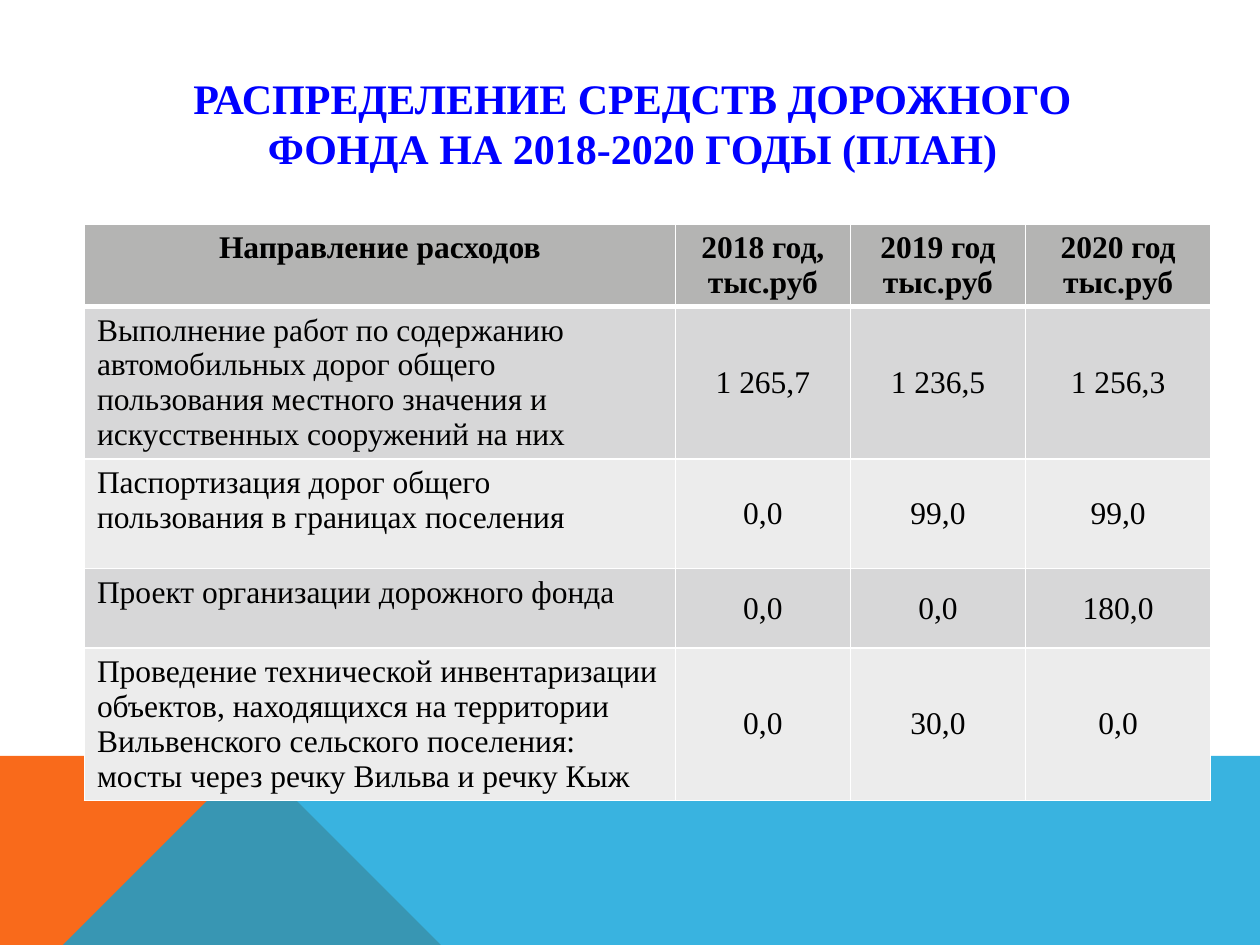
"""Build the slide on the planned road fund spending for 2018-2020."""
import pptx
import pptx.util
import pptx.dml.color
import pptx.enum.text
import pptx.oxml
import pptx.oxml.ns
import lxml.etree

Inches, Pt = pptx.util.Inches, pptx.util.Pt
PP_ALIGN, MSO_ANCHOR = pptx.enum.text.PP_ALIGN, pptx.enum.text.MSO_ANCHOR
qn = pptx.oxml.ns.qn


def paint(color_format, hex_color):
    color_format.rgb = pptx.dml.color.RGBColor.from_string(hex_color)


def set_font(p, size, color, bold):
    p.font.name, p.font.size, p.font.bold = "Times New Roman", Pt(size), bold
    paint(p.font.color, color)


prs = pptx.Presentation()
prs.slide_width, prs.slide_height = Inches(10), Inches(7.5)
s = prs.slides.add_slide(prs.slide_layouts[5])

bands = [
    ("F96A1B", 100, [(0, 7.5), (0, 5.52), (2.23, 5.52), (3.91, 7.5)]),
    ("08A1D9", 80, [(0, 7.5), (2.23, 5.52), (10, 5.53), (10, 7.5)]),
]
for color, opacity, points in bands:
    fb = s.shapes.build_freeform(*points[0], scale=Inches(1))
    fb.add_line_segments(points[1:], close=True)
    sp = fb.convert_to_shape()
    sp.shadow.inherit = False
    sp.line.fill.background()
    sp.fill.solid()
    paint(sp.fill.fore_color, color)
    if opacity < 100:
        clr = sp.fill._xPr.find(qn("a:solidFill"))[0]
        lxml.etree.SubElement(clr, qn("a:alpha"), val=str(opacity * 1000))

rows = [
    ("Направление расходов", "2018 год, тыс.руб", "2019 год\nтыс.руб", "2020 год\nтыс.руб"),
    ("Выполнение работ по содержанию автомобильных дорог общего пользования "
     "местного значения и искусственных сооружений на них", "1 265,7", "1 236,5", "1 256,3"),
    ("Паспортизация дорог общего пользования в границах поселения", "0,0", "99,0", "99,0"),
    ("Проект организации дорожного фонда", "0,0", "0,0", "180,0"),
    ("Проведение технической инвентаризации объектов, находящихся на территории "
     "Вильвенского сельского поселения: мосты через речку Вильва и речку Кыж",
     "0,0", "30,0", "0,0"),
]
widths = [4.69, 1.39, 1.39, 1.47]
heights = [0.64, 1.21, 0.87, 0.63, 1.21]
fills = ["B4B4B3", "D7D7D8", "ECECEC", "D7D7D8", "ECECEC"]
table = s.shapes.add_table(len(rows), len(widths), Inches(0.67), Inches(1.78),
                           Inches(sum(widths)), Inches(sum(heights))).table
for column, width in zip(table.columns, widths):
    column.width = Inches(width)
for i, texts in enumerate(rows):
    table.rows[i].height = Inches(heights[i])
    for j, text in enumerate(texts):
        cell = table.cell(i, j)
        cell.text = text
        cell.vertical_anchor = MSO_ANCHOR.MIDDLE if i and j else MSO_ANCHOR.TOP
        for p in cell.text_frame.paragraphs:
            p.alignment = PP_ALIGN.LEFT if i and not j else PP_ALIGN.CENTER
            set_font(p, 18, "000000", i == 0)
        tcPr = cell._tc.get_or_add_tcPr()
        for side in ("L", "R", "T", "B"):
            thick = (i, side) in ((0, "B"), (1, "T"))
            ln = lxml.etree.SubElement(tcPr, qn(f"a:ln{side}"), w=str(Pt(3 if thick else 1)))
            fill = lxml.etree.SubElement(ln, qn("a:solidFill"))
            lxml.etree.SubElement(fill, qn("a:srgbClr"), val="FFFFFF")
        cell.fill.solid()
        paint(cell.fill.fore_color, fills[i])

title = s.shapes.title
title.left, title.top, title.width, title.height = map(Inches, (0.91, 0.52, 8.22, 0.91))
tf = title.text_frame
tf.text = "РАСПРЕДЕЛЕНИЕ СРЕДСТВ ДОРОЖНОГО ФОНДА НА 2018-2020 ГОДЫ (ПЛАН)"
tf.word_wrap = True
tf.vertical_anchor = MSO_ANCHOR.MIDDLE
p = tf.paragraphs[0]
p.alignment = PP_ALIGN.CENTER
set_font(p, 24, "0000FF", True)

prs.save("out.pptx")
